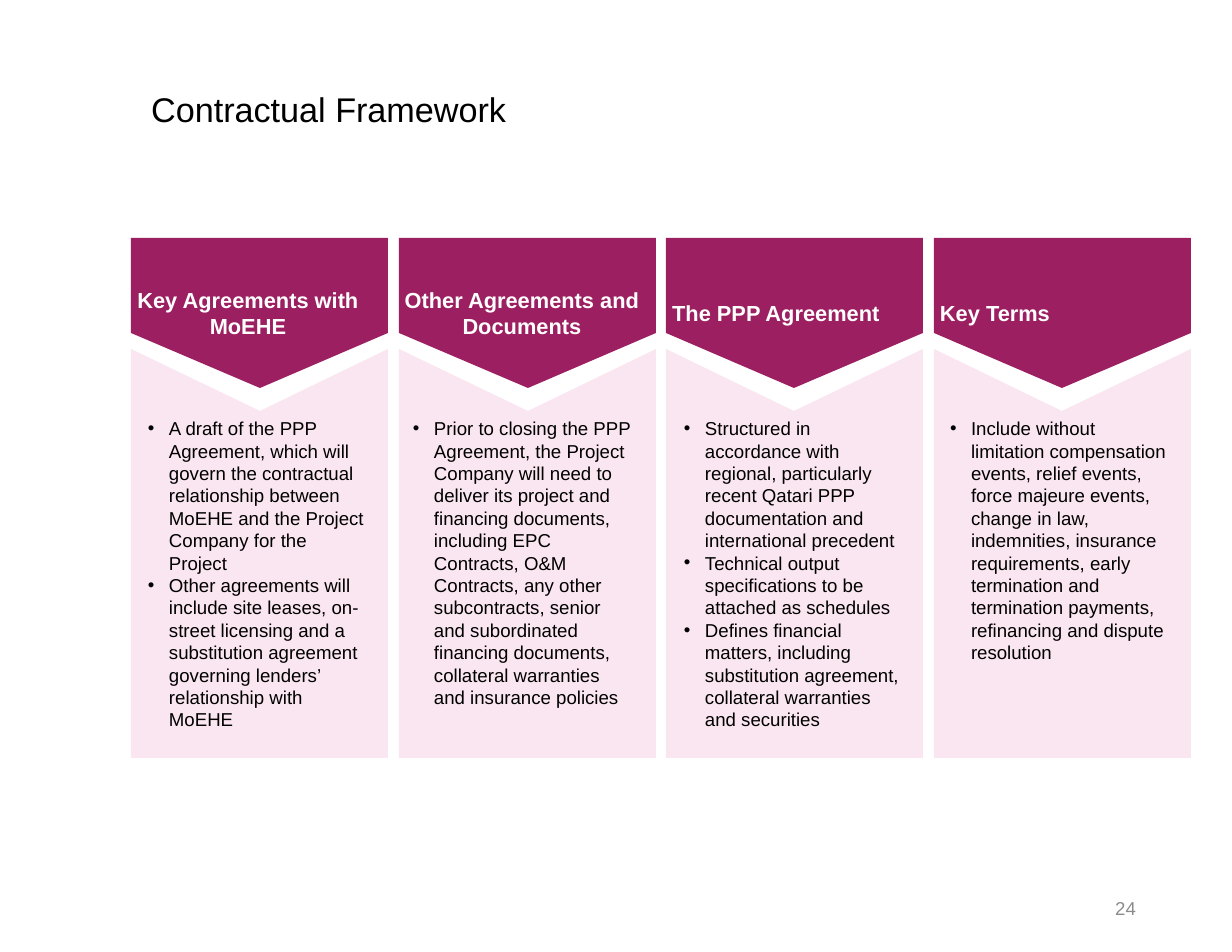
from lxml.etree import SubElement
from pptx import Presentation
from pptx.dml.color import RGBColor
from pptx.enum.text import MSO_ANCHOR as Anchor, PP_ALIGN as Align
from pptx.oxml.ns import qn
from pptx.util import Pt

PX = 914400 / 112
PLUM = RGBColor(0x9C, 0x20, 0x61)
PINK = RGBColor(0xFA, 0xE6, 0xF0)
GRAY = RGBColor(0x8C, 0x8C, 0x8C)
BLACK = RGBColor(0, 0, 0)
WHITE = RGBColor(255, 255, 255)

TITLE = "Contractual Framework"
NUMBER = "24"
COLUMNS = [
    ("Key Agreements with MoEHE", 226, 17, [
        "A draft of the PPP Agreement, which will govern the contractual relationship "
        "between MoEHE and the Project Company for the Project",
        "Other agreements will include site leases, on-street licensing and a "
        "substitution agreement governing lenders’ relationship with MoEHE"]),
    ("Other Agreements and Documents", 238, 14, [
        "Prior to closing the PPP Agreement, the Project Company will need to deliver "
        "its project and financing documents, including EPC Contracts, O&M Contracts, "
        "any other subcontracts, senior and subordinated financing documents, "
        "collateral warranties and insurance policies"]),
    ("The PPP Agreement", 212, 18, [
        "Structured in accordance with regional, particularly recent Qatari PPP "
        "documentation and international precedent",
        "Technical output specifications to be attached as schedules",
        "Defines financial matters, including substitution agreement, collateral "
        "warranties and securities"]),
    ("Key Terms", 114, 16, [
        "Include without limitation compensation events, relief events, force majeure "
        "events, change in law, indemnities, insurance requirements, early termination "
        "and termination payments, refinancing and dispute resolution"]),
]
LEFT, RIGHT, WIDE = 131, 1191, 257
STEP = (RIGHT - LEFT - WIDE) / (len(COLUMNS) - 1)
HEAD_TOP, HEAD_SIDE, HEAD_TIP = 238, 333, 388
BODY_TOP, BODY_TIP, BODY_END = 349, 411, 758
TEXT_TOP, TEXT_WIDE, TEXT_HIGH = 417, 220, 250
INSET, HANG = 4, 21


def px(n):
    return round(n * PX)


def style(para, size, color, align=Align.LEFT, bold=False):
    para.alignment = align
    font = para.font
    font.name, font.size, font.bold = "Arial", Pt(size), bold
    font.color.rgb = color


def margins(frame, left=0, right=0, top=0, bottom=0):
    frame.word_wrap = True
    frame.margin_left, frame.margin_right = px(left), px(right)
    frame.margin_top, frame.margin_bottom = px(top), px(bottom)


def outline(slide, points, color):
    pen = slide.shapes.build_freeform(*points[0], scale=PX)
    pen.add_line_segments(points[1:], close=True)
    shape = pen.convert_to_shape()
    shape.shadow.inherit = False
    shape.fill.solid()
    shape.fill.fore_color.rgb = color
    shape.line.fill.background()
    return shape


def bullet(para):
    props = para._p.get_or_add_pPr()
    props.set("marL", str(px(HANG)))
    props.set("indent", str(-px(HANG)))
    SubElement(props, qn("a:buFont"), typeface="Arial")
    SubElement(props, qn("a:buChar"), char="•")


def column(slide, x, head, span, shift, items):
    mid, end = x + WIDE / 2, x + WIDE
    top = outline(slide, [(x, HEAD_TOP), (x, HEAD_SIDE), (mid, HEAD_TIP),
                          (end, HEAD_SIDE), (end, HEAD_TOP)], PLUM)
    frame = top.text_frame
    margins(frame, INSET, WIDE - INSET - span)
    frame.vertical_anchor = Anchor.MIDDLE
    frame.text = head
    style(frame.paragraphs[0], 14, WHITE, Align.CENTER, True)

    outline(slide, [(x, BODY_TOP), (x, BODY_END), (end, BODY_END),
                    (end, BODY_TOP), (mid, BODY_TIP)], PINK)
    box = slide.shapes.add_textbox(px(x + shift), px(TEXT_TOP), px(TEXT_WIDE), px(TEXT_HIGH))
    frame = box.text_frame
    margins(frame)
    frame.text = "\n".join(items)
    for para in frame.paragraphs:
        bullet(para)
        style(para, 12, BLACK)


def main():
    deck = Presentation()
    deck.slide_width, deck.slide_height = px(1232), px(952)
    slide = deck.slides.add_slide(deck.slide_layouts[5])

    title = slide.shapes.title
    title.left, title.top, title.width, title.height = px(140), px(87), px(1008), px(86)
    title.text = TITLE
    frame = title.text_frame
    frame.vertical_anchor = Anchor.TOP
    para = frame.paragraphs[0]
    para.line_spacing = 0.9
    style(para, 22, BLACK)

    for i, (head, span, shift, items) in enumerate(COLUMNS):
        column(slide, round(LEFT + i * STEP), head, span, shift, items)

    frame = slide.shapes.add_textbox(px(870), px(883), px(277), px(50)).text_frame
    frame.vertical_anchor = Anchor.MIDDLE
    frame.text = NUMBER
    style(frame.paragraphs[0], 12, GRAY, Align.RIGHT)
    deck.save("out.pptx")


if __name__ == "__main__":
    main()
